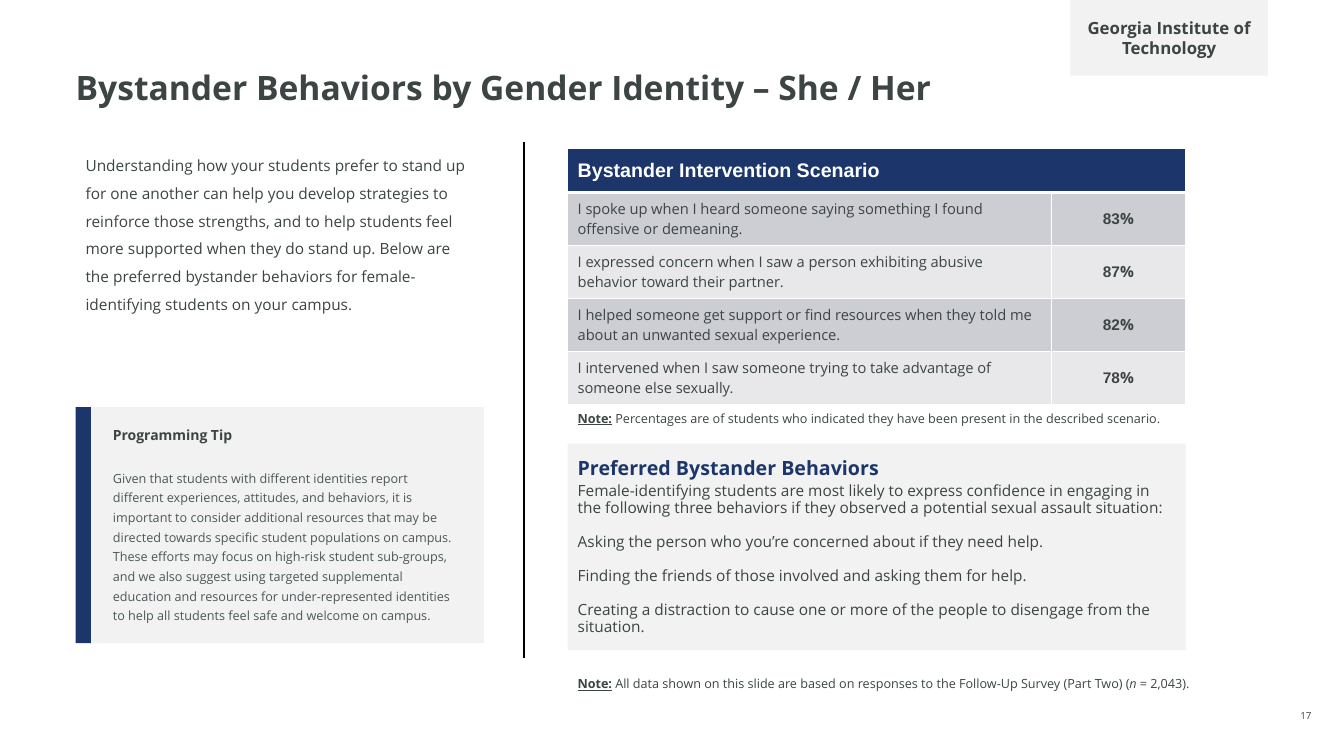
from lxml.etree import SubElement
from pptx import Presentation
from pptx.dml.color import RGBColor
from pptx.enum.shapes import MSO_CONNECTOR, MSO_SHAPE
from pptx.enum.text import MSO_ANCHOR as ANCHOR, MSO_AUTO_SIZE as FIT, PP_ALIGN as ALIGN
from pptx.oxml.ns import qn
from pptx.util import Inches, Pt

COLORS = {
    "ink": "3C4543", "soft ink": "4C5758", "navy": "1C366B", "panel": "F2F2F2",
    "odd row": "CDCED4", "even row": "E8E8EB", "white": "FFFFFF", "black": "000000",
}
FONT = "Open Sans"
WIDTH, HEIGHT = Inches(13.333), Inches(7.5)

# Shares of the slide, in percent
LEFT, RIGHT = 5.63, 42.23
RIGHT_WIDTH = 45.98
TIP_TOP, TIP_HEIGHT = 53.87, 31.2

SCENARIOS = [
    ("I spoke up when I heard someone saying something I found offensive or demeaning.", 83),
    ("I expressed concern when I saw a person exhibiting abusive behavior toward their partner.", 87),
    ("I helped someone get support or find resources when they told me about an unwanted "
     "sexual experience.", 82),
    ("I intervened when I saw someone trying to take advantage of someone else sexually.", 78),
]
BEHAVIORS = [
    "Asking the person who you’re concerned about if they need help.",
    "Finding the friends of those involved and asking them for help.",
    "Creating a distraction to cause one or more of the people to disengage from the situation.",
]
INTRO = (
    "Understanding how your students prefer to stand up for one another can help you develop "
    "strategies to reinforce those strengths, and to help students feel more supported when they "
    "do stand up. Below are the preferred bystander behaviors for female-identifying students "
    "on your campus."
)
TIP = (
    "Given that students with different identities report different experiences, attitudes, and "
    "behaviors, it is important to consider additional resources that may be directed towards "
    "specific student populations on campus. These efforts may focus on high-risk student "
    "sub-groups, and we also suggest using targeted supplemental education and resources for "
    "under-represented identities to help all students feel safe and welcome on campus."
)
PREFERENCE = (
    "Female-identifying students are most likely to express confidence in engaging in the "
    "following three behaviors if they observed a potential sexual assault situation:"
)


def rgb(name):
    return RGBColor.from_string(COLORS[name])


def area(x, y, w, h):
    """Turn percentages of the slide into left, top, width and height."""
    return tuple(int(share * side / 100) for share, side in
                 ((x, WIDTH), (y, HEIGHT), (w, WIDTH), (h, HEIGHT)))


def place(s, *shares):
    s.left, s.top, s.width, s.height = area(*shares)


def fill(item, color):
    item.fill.solid()
    item.fill.fore_color.rgb = rgb(color)


def set_frame(tf, anchor=ANCHOR.TOP, side=0.1, top=0.05):
    tf.word_wrap = True
    tf.auto_size = FIT.NONE
    tf.vertical_anchor = anchor
    tf.margin_left = tf.margin_right = Inches(side)
    tf.margin_top = tf.margin_bottom = Inches(top)


def add_run(p, text, size, color="ink", bold=False, font=FONT, italic=False, underline=False):
    r = p.add_run()
    r.text = text
    f = r.font
    f.name, f.size, f.bold, f.italic, f.underline = font, Pt(size), bold, italic, underline
    f.color.rgb = rgb(color)


def add_paragraph(tf, text, size, align=ALIGN.LEFT, spacing=1.0, before=0, after=0, **style):
    """Write into the empty first paragraph, or into a new one after it."""
    p = tf.paragraphs[0] if not tf.text else tf.add_paragraph()
    p.alignment, p.line_spacing = align, spacing
    p.space_before, p.space_after = Pt(before), Pt(after)
    if text:
        add_run(p, text, size, **style)
    return p


def add_text_box(slide, shares, **frame):
    tf = slide.shapes.add_textbox(*area(*shares)).text_frame
    set_frame(tf, **frame)
    return tf


def add_panel(slide, shares, color, **frame):
    s = slide.shapes.add_shape(MSO_SHAPE.RECTANGLE, *area(*shares))
    s.shadow.inherit = False
    fill(s, color)
    s.line.fill.background()
    set_frame(s.text_frame, ANCHOR.MIDDLE, **frame)
    return s.text_frame


def add_divider(slide, x, top, bottom):
    x, top, _, bottom = area(x, top, 0, bottom)
    line = slide.shapes.add_connector(MSO_CONNECTOR.STRAIGHT, x, top, x, bottom)
    line.line.color.rgb = rgb("black")
    line.line.width = Pt(1)
    SubElement(line._element.spPr, qn("a:effectLst"))


def add_note(slide, shares, *parts, spacing=1.0):
    """Add a note; each part is a text and whether it is italic."""
    p = add_paragraph(add_text_box(slide, shares), "Note:", 9, spacing=spacing,
                      bold=True, underline=True)
    for text, italic in parts:
        add_run(p, text, 9, italic=italic)


def style_cell(cell, color, bottom=1):
    tc_pr = cell._tc.get_or_add_tcPr()
    for side, width in (("L", 1), ("R", 1), ("T", 1), ("B", bottom)):
        edge = SubElement(tc_pr, qn(f"a:ln{side}"), w=str(Pt(width)))
        paint = SubElement(edge, qn("a:solidFill"))
        SubElement(paint, qn("a:srgbClr"), val=COLORS["white"])
    fill(cell, color)
    cell.vertical_anchor = ANCHOR.MIDDLE


def add_scenario_table(slide):
    table = slide.shapes.add_table(len(SCENARIOS) + 1, 2,
                                   *area(RIGHT, 19.6, RIGHT_WIDTH, 33.87)).table
    for column, width in zip(table.columns, (4.8, 1.33)):
        column.width = Inches(width)
    for i, row in enumerate(table.rows):
        row.height = Inches(0.525 if i else 0.44)
        for cell in row.cells:
            style_cell(cell, ("even row", "odd row")[i % 2] if i else "navy", 1 if i else 3)
    header = table.cell(0, 0)
    header.merge(table.cell(0, 1))
    header.margin_top = header.margin_bottom = 0
    add_paragraph(header.text_frame, "Bystander Intervention Scenario", 14,
                  color="white", bold=True, font="Arial")
    for i, (scenario, share) in enumerate(SCENARIOS, 1):
        add_paragraph(table.cell(i, 0).text_frame, scenario, 10.5)
        p = add_paragraph(table.cell(i, 1).text_frame, str(share), 11, ALIGN.CENTER,
                          bold=True, font="Arial")
        add_run(p, "%", 11, bold=True)


def fill_behaviors(body):
    place(body, RIGHT, 58.67, RIGHT_WIDTH, 27.33)
    fill(body, "panel")
    tf = body.text_frame
    set_frame(tf, ANCHOR.MIDDLE)
    paragraphs = [
        add_paragraph(tf, "Preferred Bystander Behaviors", 14, spacing=0.9, after=3,
                      color="navy", bold=True),
        add_paragraph(tf, PREFERENCE, 11, spacing=0.9),
    ]
    paragraphs += [add_paragraph(tf, b, 11, spacing=0.9, before=12.4) for b in BEHAVIORS]
    for p in paragraphs:
        p_pr = p._p.get_or_add_pPr()
        p_pr.set("marL", "0")
        p_pr.set("indent", "0")
        SubElement(p_pr, qn("a:buNone"))


def main():
    prs = Presentation()
    prs.slide_width, prs.slide_height = WIDTH, HEIGHT
    slide = prs.slides.add_slide(prs.slide_layouts[1])
    title, body = slide.placeholders

    place(title, LEFT, 9.47, 88.73, 9.33)
    set_frame(title.text_frame, side=0, top=0)
    add_paragraph(title.text_frame, "Bystander Behaviors by Gender Identity – She / Her", 24,
                  spacing=0.9, bold=True)
    add_paragraph(add_panel(slide, (79.65, 0, 14.7, 10), "panel", top=0),
                  "Georgia Institute of Technology", 12, ALIGN.CENTER, bold=True)
    add_divider(slide, 39, 18.8, 87.07)

    add_paragraph(add_text_box(slide, (LEFT, 18.8, 30.38, 23.33)), INTRO, 11,
                  spacing=1.5, after=2)
    tip = add_panel(slide, (6.53, TIP_TOP, 29.48, TIP_HEIGHT), "panel", side=0.25, top=0)
    add_paragraph(tip, "Programming Tip", 10, spacing=Pt(12), after=16, bold=True)
    add_paragraph(tip, TIP, 9, spacing=1.3, after=2, color="soft ink")
    add_panel(slide, (LEFT, TIP_TOP, 1.13, TIP_HEIGHT), "navy")

    add_scenario_table(slide)
    add_note(slide, (RIGHT, 53.47, 46.58, 3.07),
             (" Percentages are of students who indicated they have been present in the "
              "described scenario.", False), spacing=Pt(12))
    fill_behaviors(body)
    add_note(slide, (RIGHT, 88.8, 47.55, 3.33),
             (" All data shown on this slide are based on responses to the Follow-Up Survey "
              "(Part Two) (", False), ("n", True), (" = 2,043).", False))
    add_paragraph(add_text_box(slide, (95.25, 93.47, 3.83, 2), anchor=ANCHOR.BOTTOM,
                               side=0, top=0), "17", 7, ALIGN.CENTER)
    prs.save("out.pptx")


if __name__ == "__main__":
    main()
